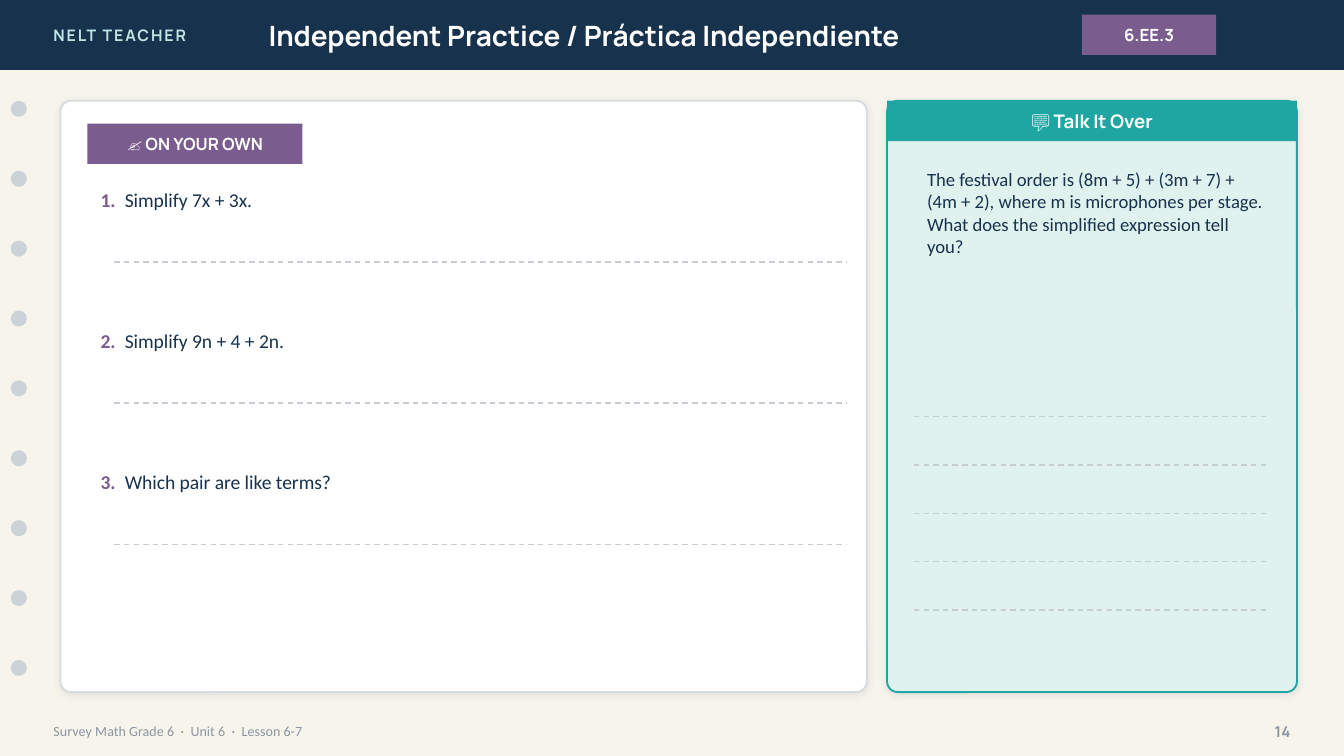
from dataclasses import dataclass

from lxml import etree
from pptx import Presentation
from pptx import util as u
from pptx.dml.color import RGBColor
from pptx.enum import dml, shapes, text
from pptx.oxml import ns

SHAPE = shapes.MSO_SHAPE
ALIGN = text.PP_ALIGN


@dataclass(frozen=True)
class Theme:
    """Fonts, colours and type sizes of the worksheet."""
    head: str = "Manrope"
    body: str = "Calibri"
    paper: str = "F7F4EC"
    navy: str = "17324D"
    mint: str = "BFE6E2"
    pale: str = "DFF2EE"
    teal: str = "1FA6A2"
    purple: str = "7A5C8E"
    white: str = "FFFFFF"
    hole: str = "CBD3D9"
    grey: str = "8A96A3"
    edge: str = "D6DBDF"
    rule: str = "C7CDD2"
    shade: str = "1C2E42"
    title: float = 15
    question: float = 10.5
    talk: float = 10
    tag: float = 9
    brand: float = 8.5
    page: float = 8
    footer: float = 7.5


T = Theme()


def rgb(value):
    """Turn a hex string into a colour."""
    return RGBColor.from_string(value)


def child(parent, tag, **attrs):
    """Append a drawing element with the given attributes."""
    names = {name: str(value) for name, value in attrs.items()}
    return etree.SubElement(parent, ns.qn(tag), names)


def style_run(r, size, color, font, bold=False, spacing=0):
    """Format one run."""
    r.font.size = u.Pt(size)
    r.font.name = font
    r.font.bold = bold
    r.font.color.rgb = rgb(color)
    if spacing:
        r._r.get_or_add_rPr().set("spc", str(int(spacing * 100)))


def add_block(s, kind, box, fill, line=None, adjust=None):
    """Add a filled shape without a shadow."""
    sp = s.shapes.add_shape(kind, *map(u.Inches, box))
    sp.shadow.inherit = False
    sp.fill.solid()
    sp.fill.fore_color.rgb = rgb(fill)
    if line:
        sp.line.color.rgb = rgb(line)
        sp.line.width = u.Pt(1)
    else:
        sp.line.fill.background()
    if adjust is not None:
        sp.adjustments[0] = adjust
    return sp


def add_card(s, box, fill, line, adjust):
    """Add a rounded card with a soft shadow below it."""
    sp = add_block(s, SHAPE.ROUNDED_RECTANGLE, box, fill, line, adjust)
    effects = sp._element.spPr.find(ns.qn("a:effectLst"))
    shadow = child(effects, "a:outerShdw", blurRad=u.Pt(4), dist=u.Pt(1),
                   dir=90 * 60000, algn="bl", rotWithShape=0)
    child(child(shadow, "a:srgbClr", val=T.shade), "a:alpha", val=10000)


def add_label(s, box, words, size, fill):
    """Add a filled bar with centred bold white text."""
    sp = add_block(s, SHAPE.RECTANGLE, box, fill)
    tf = sp.text_frame
    tf.text = words
    tf.vertical_anchor = text.MSO_ANCHOR.MIDDLE
    p = tf.paragraphs[0]
    p.alignment = ALIGN.CENTER
    style_run(p.runs[0], size, T.white, T.head, True)


def add_text(s, box, runs, anchor=text.MSO_ANCHOR.MIDDLE, align=ALIGN.LEFT, tab=None):
    """Add a wrapped text box from (words, style) pairs."""
    tf = s.shapes.add_textbox(*map(u.Inches, box)).text_frame
    tf.word_wrap = True
    tf.vertical_anchor = anchor
    p = tf.paragraphs[0]
    p.alignment = align
    if tab:
        tabs = child(p._p.get_or_add_pPr(), "a:tabLst")
        child(tabs, "a:tab", pos=u.Inches(tab), algn="l")
    for words, style in runs:
        r = p.add_run()
        r.text = words
        style_run(r, **style)


def add_answer_line(s, left, right, y):
    """Add a dashed writing line."""
    line = s.shapes.add_connector(shapes.MSO_CONNECTOR.STRAIGHT,
                                  *map(u.Inches, (left, y, right, y)))
    line.line.color.rgb = rgb(T.rule)
    line.line.width = u.Pt(0.75)
    line.line.dash_style = dml.MSO_LINE.DASH
    child(line._element.spPr, "a:effectLst")


def add_frame(s):
    """Add the header band, binder holes and footer."""
    add_block(s, SHAPE.RECTANGLE, (0, 0, 10, 0.52), T.navy)
    brand = dict(size=T.brand, color=T.mint, font=T.head, bold=True, spacing=1)
    add_text(s, (0.3, 0, 2.4, 0.52), [("NELT TEACHER", brand)])
    title = dict(size=T.title, color=T.white, font=T.head, bold=True)
    add_text(s, (1.9, 0, 5.6, 0.52),
             [("Independent Practice / Práctica Independiente", title)])
    add_label(s, (8.05, 0.11, 1, 0.3), "6.EE.3", T.tag, T.purple)
    for i in range(9):
        add_block(s, SHAPE.OVAL, (0.08, 0.75 + 0.52 * i, 0.12, 0.12), T.hole)
    footer = dict(size=T.footer, color=T.grey, font=T.body)
    add_text(s, (0.3, 5.3, 7, 0.28),
             [("Survey Math Grade 6  ·  Unit 6  ·  Lesson 6-7", footer)])
    page = dict(size=T.page, color=T.grey, font=T.head, bold=True)
    add_text(s, (9.2, 5.3, 0.5, 0.28), [("14", page)], align=ALIGN.RIGHT)


def add_practice(s, questions):
    """Add the practice card with numbered questions."""
    add_card(s, (0.45, 0.75, 6, 4.4), T.white, T.edge, 0.018)
    add_label(s, (0.65, 0.92, 1.6, 0.3), "✍️ ON YOUR OWN", T.tag, T.purple)
    number = dict(size=T.question, color=T.purple, font=T.body, bold=True)
    body = dict(number, color=T.navy, bold=False)
    for i, question in enumerate(questions):
        top = 1.35 + 1.05 * i
        add_text(s, (0.65, top, 5.65, 0.5),
                 [(f"{i + 1}.\t", number), (question, body)],
                 text.MSO_ANCHOR.TOP, tab=0.18)
        add_answer_line(s, 0.85, 6.3, top + 0.6)


def add_talk(s, prompt):
    """Add the discussion card with its writing lines."""
    add_card(s, (6.6, 0.75, 3.05, 4.4), T.pale, T.teal, 0.026)
    add_label(s, (6.6, 0.75, 3.05, 0.3), "💬 Talk It Over", T.talk, T.teal)
    body = dict(size=T.talk, color=T.navy, font=T.body)
    add_text(s, (6.8, 1.2, 2.7, 1.7), [(prompt, body)], text.MSO_ANCHOR.TOP)
    for i in range(5):
        add_answer_line(s, 6.8, 9.45, 3.1 + 0.36 * i)


def main():
    """Build and save the slide."""
    prs = Presentation()
    prs.slide_width = u.Inches(10)
    prs.slide_height = u.Inches(10 * 9 / 16)
    s = prs.slides.add_slide(prs.slide_layouts[6])
    s.background.fill.solid()
    s.background.fill.fore_color.rgb = rgb(T.paper)
    add_frame(s)
    add_practice(s, ["Simplify 7x + 3x.", "Simplify 9n + 4 + 2n.",
                     "Which pair are like terms?"])
    add_talk(s, "The festival order is (8m + 5) + (3m + 7) + (4m + 2), "
                "where m is microphones per stage. "
                "What does the simplified expression tell you?")
    prs.save("out.pptx")


if __name__ == "__main__":
    main()
